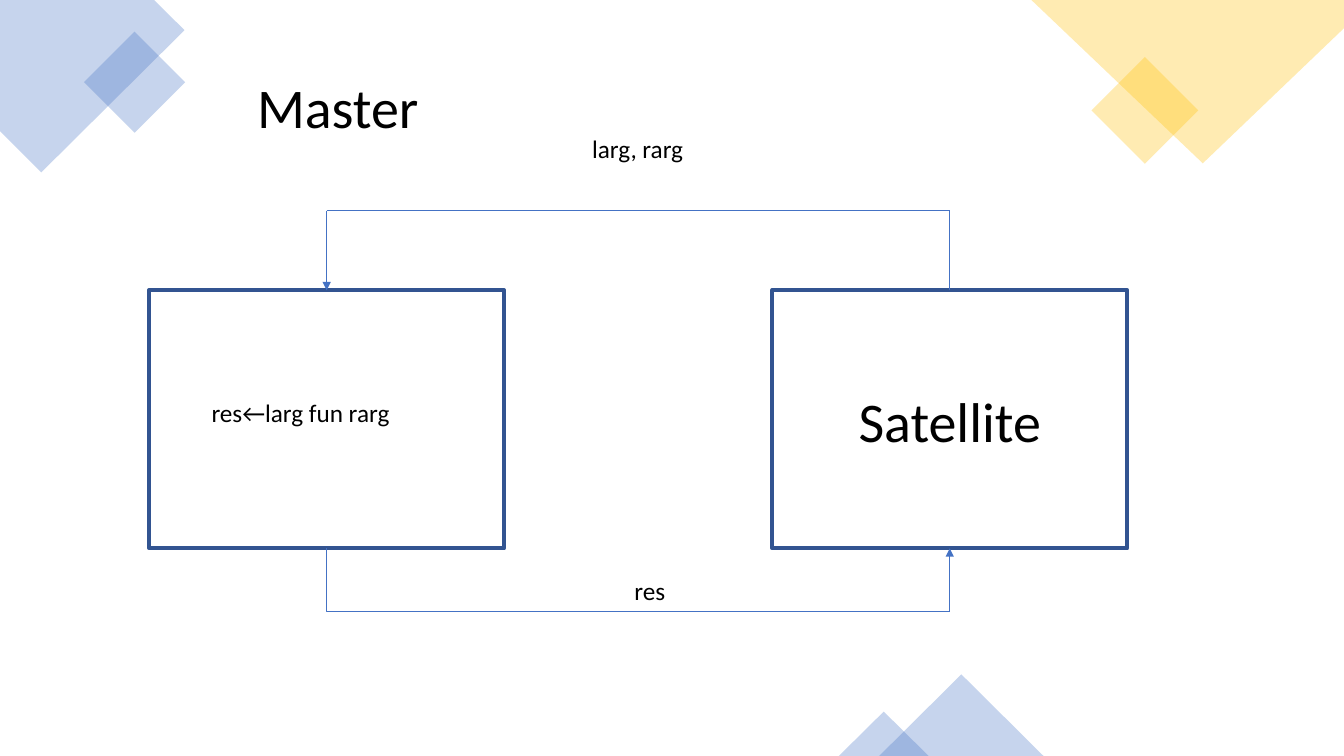
"""Draw the master and satellite message loop on one slide."""
import pptx
import pptx.util
import pptx.dml.color
import pptx.enum.shapes
import pptx.enum.text
import pptx.oxml
import pptx.oxml.ns

Inches = pptx.util.Inches
Kind = pptx.enum.shapes.MSO_SHAPE
Link = pptx.enum.shapes.MSO_CONNECTOR
Align = pptx.enum.text.PP_ALIGN

BLUE, GOLD, NAVY, BLACK = "4472C4", "FFC000", "325491", "000000"
WIDE, HIGH, TOP = 3.52, 2.56, 2.88
LEFTS = {"master": 1.48, "satellite": 7.66}
UPPER, LOWER = 2.09, 6.06

CORNERS = [
    ([(0, 0), (1.53, 0), (1.83, 0.3), (0.41, 1.71), (0, 1.3)], BLUE),
    ([(10.23, 0), (13.33, 0), (13.33, 0.28), (11.93, 1.62)], GOLD),
]
DECOR = [
    (Kind.RECTANGLE, 0.98, 0.46, 0.71, 0.71, 315, BLUE),
    (Kind.RECTANGLE, 10.98, 0.72, 0.75, 0.75, 315, GOLD),
    (Kind.ISOSCELES_TRIANGLE, 8.72, 6.69, 1.63, 0.81, 0, BLUE),
    (Kind.ISOSCELES_TRIANGLE, 8.32, 7.06, 0.89, 0.44, 0, BLUE),
]
LABELS = [
    ("Master", (1.51, 0.67, 3.68, 0.77), 40, Align.CENTER),
    ("Satellite", (7.58, 3.79, 3.68, 0.77), 40, Align.CENTER),
    ("larg, rarg", (4.86, 1.27, 2.93, 0.4), 18, Align.CENTER),
    ("res←larg fun rarg", (2, 3.89, 2.54, 0.4), 18, Align.LEFT),
    ("res", (5.09, 5.66, 2.71, 0.41), 18, Align.CENTER),
]


def color(code):
    return pptx.dml.color.RGBColor.from_string(code)


def child(node, tag, **attrs):
    item = pptx.oxml.ns.qn(tag)
    part = node.makeelement(item, attrs)
    node.append(part)
    return part


def tint(shape, code):
    shape.shadow.inherit = False
    shape.fill.solid()
    shape.fill.fore_color.rgb = color(code)
    shape.line.fill.background()
    fill = shape.fill._xPr.find(".//" + pptx.oxml.ns.qn("a:srgbClr"))
    child(fill, "a:alpha", val="30000")


def frame(shapes, left):
    box = shapes.add_shape(Kind.RECTANGLE, *map(Inches, (left, TOP, WIDE, HIGH)))
    box.shadow.inherit = False
    box.fill.background()
    box.line.color.rgb = color(NAVY)
    box.line.width = pptx.util.Pt(3)
    return box


def wire(shapes, start, end, kind=Link.STRAIGHT, arrow=False):
    line = shapes.add_connector(kind, *map(Inches, start + end))
    line.line.color.rgb = color(BLUE)
    line.line.width = pptx.util.Pt(0.5)
    if arrow:
        child(line.line._get_or_add_ln(), "a:tailEnd", type="triangle")
    child(line._element.spPr, "a:effectLst")
    return line


def elbow(shapes, start, end):
    mid_x, mid_y = (start[0] + end[0]) / 2, (start[1] + end[1]) / 2
    run, drop = (end[0] - start[0]) / 2, (end[1] - start[1]) / 2
    line = wire(shapes, (mid_x + drop, mid_y - run),
                (mid_x - drop, mid_y + run), Link.ELBOW)
    props = line._element.spPr
    props.find(pptx.oxml.ns.qn("a:xfrm")).set("rot", str(270 * 60000))
    props.find(pptx.oxml.ns.qn("a:prstGeom")).set("prst", "bentConnector2")


def write(shapes, text, area, size=18, align=Align.CENTER):
    box = shapes.add_textbox(*map(Inches, area))
    body = box.text_frame
    body.word_wrap = True
    body.auto_size = pptx.enum.text.MSO_AUTO_SIZE.SHAPE_TO_FIT_TEXT
    para = body.paragraphs[0]
    para.alignment = align
    run = para.add_run()
    run.text = text
    run.font.name = "Calibri"
    run.font.size = pptx.util.Pt(size)
    run.font.color.rgb = color(BLACK)


def main():
    deck = pptx.Presentation()
    deck.slide_width, deck.slide_height = Inches(13.33), Inches(7.5)
    shapes = deck.slides.add_slide(deck.slide_layouts[6]).shapes

    for points, code in CORNERS:
        spots = [tuple(map(Inches, spot)) for spot in points]
        path = shapes.build_freeform(*spots[0])
        path.add_line_segments(spots[1:])
        tint(path.convert_to_shape(), code)
    for kind, left, top, wide, high, turn, code in DECOR:
        shape = shapes.add_shape(kind, *map(Inches, (left, top, wide, high)))
        shape.rotation = turn
        tint(shape, code)

    boxes = {name: frame(shapes, left) for name, left in LEFTS.items()}
    near, far = (left + WIDE / 2 for left in LEFTS.values())
    base = TOP + HIGH
    wire(shapes, (far, TOP), (far, UPPER)).begin_connect(boxes["satellite"], 0)
    wire(shapes, (far, UPPER), (near, UPPER))
    down = wire(shapes, (near, UPPER), (near, TOP), arrow=True)
    down.end_connect(boxes["master"], 0)
    elbow(shapes, (near, base), (far, LOWER))
    rise = wire(shapes, (far, LOWER), (far, base), arrow=True)
    rise.end_connect(boxes["satellite"], 2)

    for text, area, size, align in LABELS:
        write(shapes, text, area, size=size, align=align)
    deck.save("out.pptx")


if __name__ == "__main__":
    main()
